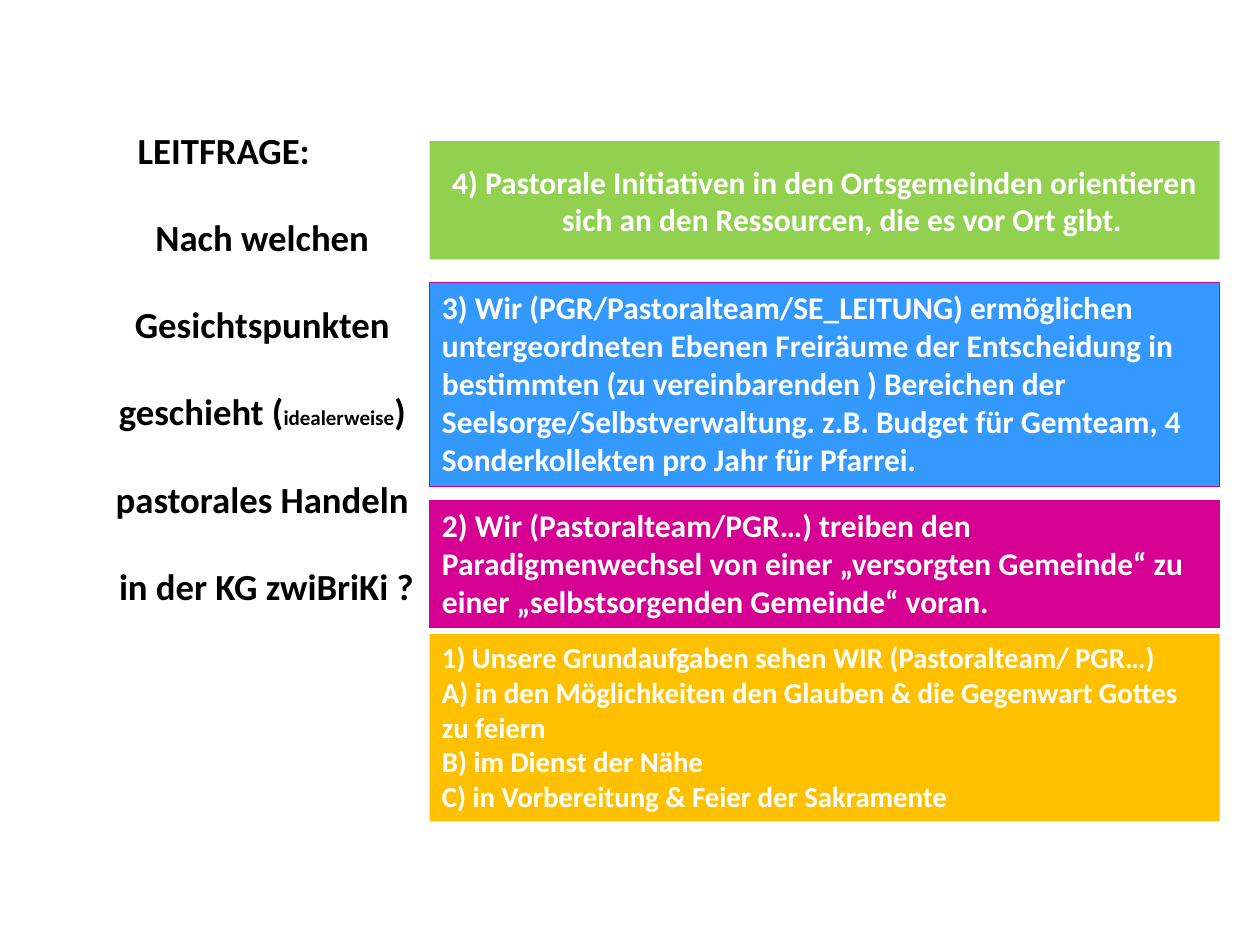
from pptx import Presentation
from pptx.dml.color import RGBColor
from pptx.enum.shapes import MSO_SHAPE
from pptx.enum.text import MSO_ANCHOR, MSO_AUTO_SIZE, PP_ALIGN
from pptx.util import Inches, Pt

COLORS = {
    "text": "000000",
    "white": "FFFFFF",
    "magenta": "D60093",
    "blue": "3399FF",
    "green": "92D050",
    "amber": "FFC000",
    "outline": "CC0099",
}
BOX_LEFT, BOX_WIDTH = 3.41, 6.27

# Each title line is a list of (text, size)
TITLE_LINES = [
    [("LEITFRAGE: ", 21)],
    [("Nach welchen ", 21)],
    [("Gesichtspunkten ", 21)],
    [("geschieht (", 21), ("idealerweise", 12), (") ", 21)],
    [("pastorales Handeln ", 21)],
    [("in der KG zwiBriKi ?", 21)],
]

# Top, height, fill, outline, size, paragraphs
BOXES = [
    (3.97, 1.01, "magenta", "outline", 18, [
        "2) Wir (Pastoralteam/PGR…) treiben den Paradigmenwechsel von einer "
        "„versorgten Gemeinde“ zu einer „selbstsorgenden Gemeinde“ voran."]),
    (2.24, 1.62, "blue", "outline", 18, [
        "3) Wir (PGR/Pastoralteam/SE_LEITUNG) ermöglichen untergeordneten "
        "Ebenen Freiräume der Entscheidung in bestimmten (zu vereinbarenden ) "
        "Bereichen der Seelsorge/Selbstverwaltung. z.B. Budget für Gemteam, "
        "4 Sonderkollekten pro Jahr für Pfarrei."]),
    (1.12, 0.94, "green", None, 18, [
        "4) Pastorale Initiativen in den Ortsgemeinden orientieren sich an "
        "den Ressourcen, die es vor Ort gibt."]),
    (5.03, 1.49, "amber", None, 16.5, [
        "1) Unsere Grundaufgaben sehen WIR (Pastoralteam/ PGR…)",
        "A) in den Möglichkeiten den Glauben & die Gegenwart Gottes zu feiern",
        "B) im Dienst der Nähe",
        "C) in Vorbereitung & Feier der Sakramente"]),
]


def rgb(name):
    return RGBColor.from_string(COLORS[name])


def format_run(r, size, color):
    r.font.name = "Calibri"
    r.font.size = Pt(size)
    r.font.bold = True
    r.font.color.rgb = rgb(color)


def set_indent(p, left, first=0):
    pPr = p._p.get_or_add_pPr()
    pPr.set("marL", str(Inches(left)))
    pPr.set("indent", str(Inches(first)))


def fill_title(sp):
    sp.left, sp.top = Inches(0.06), Inches(0.94)
    sp.width, sp.height = Inches(3.5), Inches(4.33)
    tf = sp.text_frame
    tf.auto_size = MSO_AUTO_SIZE.NONE
    tf.vertical_anchor = MSO_ANCHOR.TOP
    tf.margin_top = Inches(0.07)
    for i, line in enumerate(TITLE_LINES):
        p = tf.add_paragraph() if i else tf.paragraphs[0]
        p.alignment = PP_ALIGN.CENTER
        p.space_before = Pt(24.7 if i else 0)
        set_indent(p, 0.61, 0 if i else -0.61)
        for text, size in line:
            r = p.add_run()
            r.text = text
            format_run(r, size, "text")


def add_box(s, top, height, fill, outline, size, paragraphs):
    sp = s.shapes.add_shape(MSO_SHAPE.RECTANGLE, Inches(BOX_LEFT), Inches(top),
                            Inches(BOX_WIDTH), Inches(height))
    sp.shadow.inherit = False
    sp.fill.solid()
    sp.fill.fore_color.rgb = rgb(fill)
    if outline:
        sp.line.color.rgb = rgb(outline)
        sp.line.width = Pt(0.75)
    else:
        sp.line.fill.background()
    tf = sp.text_frame
    tf.word_wrap = True
    tf.vertical_anchor = MSO_ANCHOR.TOP
    tf.text = "\n".join(paragraphs)
    for p in tf.paragraphs:
        p.alignment = PP_ALIGN.LEFT
        for r in p.runs:
            format_run(r, size, "white")
    return sp


def center_text(sp):
    tf = sp.text_frame
    tf.vertical_anchor = MSO_ANCHOR.MIDDLE
    tf.margin_left = tf.margin_right = Inches(0.07)
    tf.margin_top = tf.margin_bottom = Inches(0.04)
    for p in tf.paragraphs:
        p.alignment = PP_ALIGN.CENTER
        set_indent(p, 0.28, -0.28)


def main():
    prs = Presentation()
    prs.slide_width, prs.slide_height = Inches(10), Inches(7.5)
    s = prs.slides.add_slide(prs.slide_layouts[5])

    # Guiding question on the left
    fill_title(s.shapes.title)

    # Stacked answers on the right; only the top one is centred
    for box in BOXES:
        sp = add_box(s, *box)
        if box[2] == "green":
            center_text(sp)

    prs.save("out.pptx")


if __name__ == "__main__":
    main()
